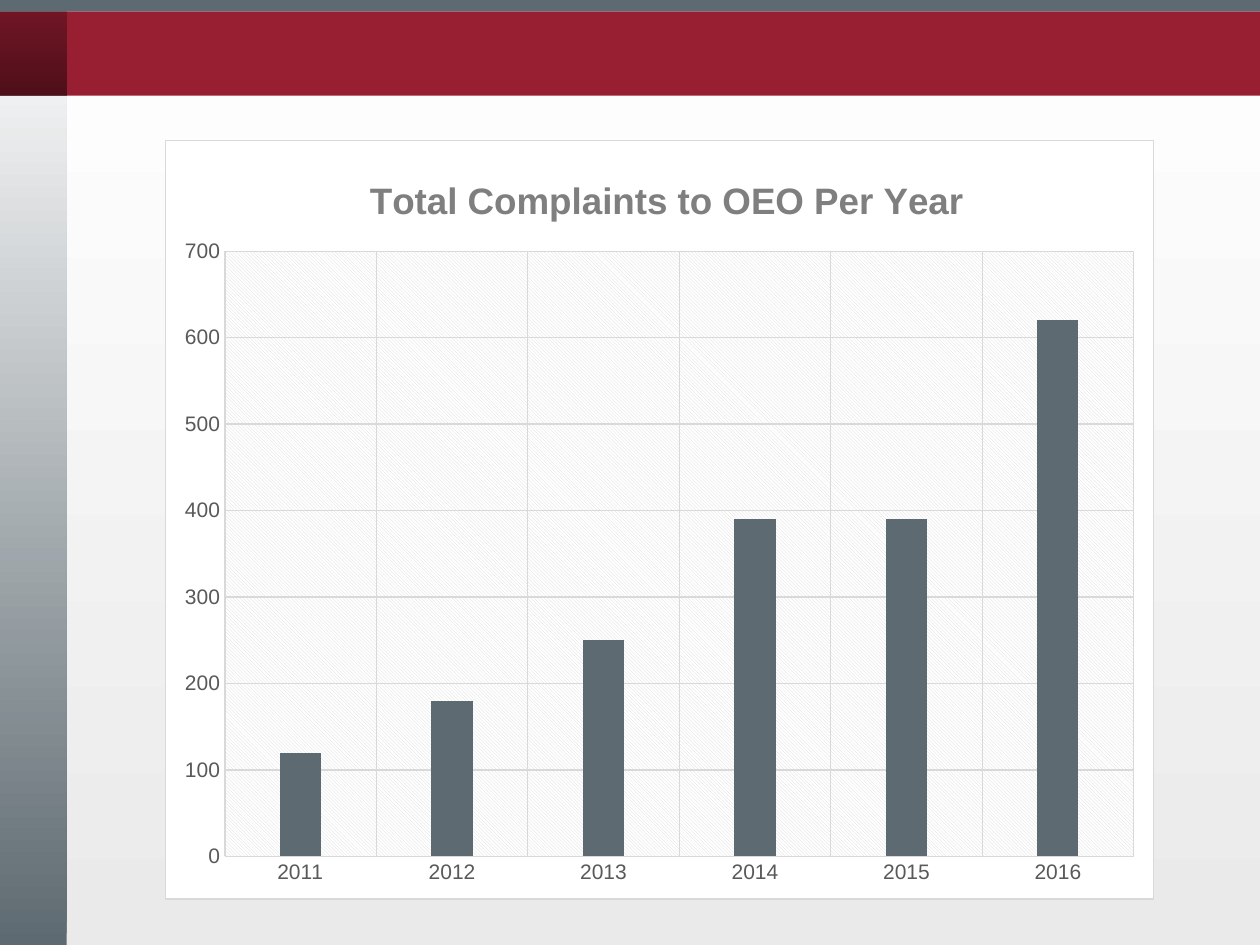
from lxml.etree import SubElement
from pptx import Presentation
from pptx.chart.data import CategoryChartData
from pptx.dml.color import RGBColor
from pptx.enum.chart import XL_CHART_TYPE, XL_TICK_MARK
from pptx.enum.shapes import MSO_SHAPE
from pptx.oxml import parse_xml
from pptx.oxml.ns import nsdecls, qn
from pptx.util import Inches, Pt

SLATE, CRIMSON, WHITE, RULE = "5E6A71", "981E32", "FFFFFF", "D9D9D9"
color = RGBColor.from_string


def fill_upward(fill, bottom, top):
    fill.gradient()
    fill.gradient_angle = 90
    for stop, value in zip(fill.gradient_stops, (bottom, top)):
        stop.color.rgb = color(value)


def manual_layout(**shares):
    """Return a chart layout element; shares are parts of the chart's size."""
    target = '<c:layoutTarget val="inner"/>' if "w" in shares else ""
    modes = '<c:xMode val="edge"/><c:yMode val="edge"/>'
    values = "".join(f'<c:{key} val="{share}"/>' for key, share in shares.items())
    return parse_xml(f'<c:layout {nsdecls("c")}><c:manualLayout>{target}{modes}'
                     f'{values}</c:manualLayout></c:layout>')


presentation = Presentation()
presentation.slide_width, presentation.slide_height = Inches(10), Inches(7.5)
slide = presentation.slides.add_slide(presentation.slide_layouts[6])
fill_upward(slide.background.fill, "EAEAEA", WHITE)

# Frame: side bar, header band, dark corner and top strip
frame = [
    ((0, 0, 0.53, 7.5), (SLATE, WHITE), None),
    ((0, 0.09, 10, 0.67), CRIMSON, None),
    ((-0.02, 0.09, 0.55, 0.67), ("000000", "000000"), (50, 25)),
    ((-0.02, 0, 10.02, 0.09), SLATE, None),
]
for box, paint, opacities in frame:
    shape = slide.shapes.add_shape(MSO_SHAPE.RECTANGLE, *map(Inches, box))
    shape.shadow.inherit = False
    shape.line.fill.background()
    if isinstance(paint, tuple):
        fill_upward(shape.fill, *paint)
    else:
        shape.fill.solid()
        shape.fill.fore_color.rgb = color(paint)
    if opacities:
        stops = shape._element.spPr.iter(qn("a:srgbClr"))
        for stop_color, percent in zip(stops, opacities):
            SubElement(stop_color, qn("a:alpha"), val=str(percent * 1000))

# Complaints chart
data = CategoryChartData()
data.categories = ["2011", "2012", "2013", "2014", "2015", "2016"]
data.add_series("Series 1", [120, 180, 250, 390, 390, 620])
chart = slide.shapes.add_chart(
    XL_CHART_TYPE.COLUMN_CLUSTERED, *map(Inches, (1.31, 1.11, 7.85, 6.03)), data).chart
chart.has_legend = False
chart.font.name, chart.font.size = "Arial", Pt(10)

plot = chart.plots[0]
for name, value in {"gap_width": 267, "overlap": -43, "vary_by_categories": False}.items():
    setattr(plot, name, value)
column_fill = plot.series[0].format.fill
column_fill.solid()
column_fill.fore_color.rgb = color(SLATE)

chart.value_axis.minimum_scale = 0
chart.value_axis.maximum_scale = 700
chart.value_axis.major_unit = 100
for axis in (chart.category_axis, chart.value_axis):
    axis.major_tick_mark = axis.minor_tick_mark = XL_TICK_MARK.NONE
    axis.has_major_gridlines = True
    font = axis.tick_labels.font
    font.name, font.size = "Arial", Pt(12)
    font.color.rgb = color("595959")
    for line in (axis.format.line, axis.major_gridlines.format.line):
        line.color.rgb = color(RULE)
        line.width = Pt(0.75)
chart.value_axis.format.line.fill.background()

title = chart.chart_title
title.text_frame.text = "Total Complaints to OEO Per Year"
font = title.text_frame.paragraphs[0].runs[0].font
for name, value in {"name": "Arial", "size": Pt(21), "bold": True}.items():
    setattr(font, name, value)
font.color.rgb = color("7F7F7F")
title.include_in_layout = False

# Placement and area fills
chart_space = chart._chartSpace
title_element = chart_space.find(".//" + qn("c:title"))
plot_area = chart_space.find(".//" + qn("c:plotArea"))
for parent, position, layout in (
        (title_element, 1, manual_layout(x=0.2, y=0.04)),
        (plot_area, 0, manual_layout(x=0.06, y=0.146, w=0.92, h=0.798))):
    for old_layout in parent.findall(qn("c:layout")):
        parent.remove(old_layout)
    parent.insert(position, layout)

plot_area.append(parse_xml(
    f'<c:spPr {nsdecls("c", "a")}><a:pattFill prst="ltDnDiag">'
    f'<a:fgClr><a:srgbClr val="{RULE}"/></a:fgClr>'
    f'<a:bgClr><a:srgbClr val="{WHITE}"/></a:bgClr></a:pattFill></c:spPr>'))
chart_space.find(qn("c:chart")).addnext(parse_xml(
    f'<c:spPr {nsdecls("c", "a")}><a:solidFill><a:srgbClr val="{WHITE}"/></a:solidFill>'
    f'<a:ln w="{Pt(0.75)}"><a:solidFill><a:srgbClr val="{RULE}"/></a:solidFill></a:ln></c:spPr>'))

presentation.save("out.pptx")
